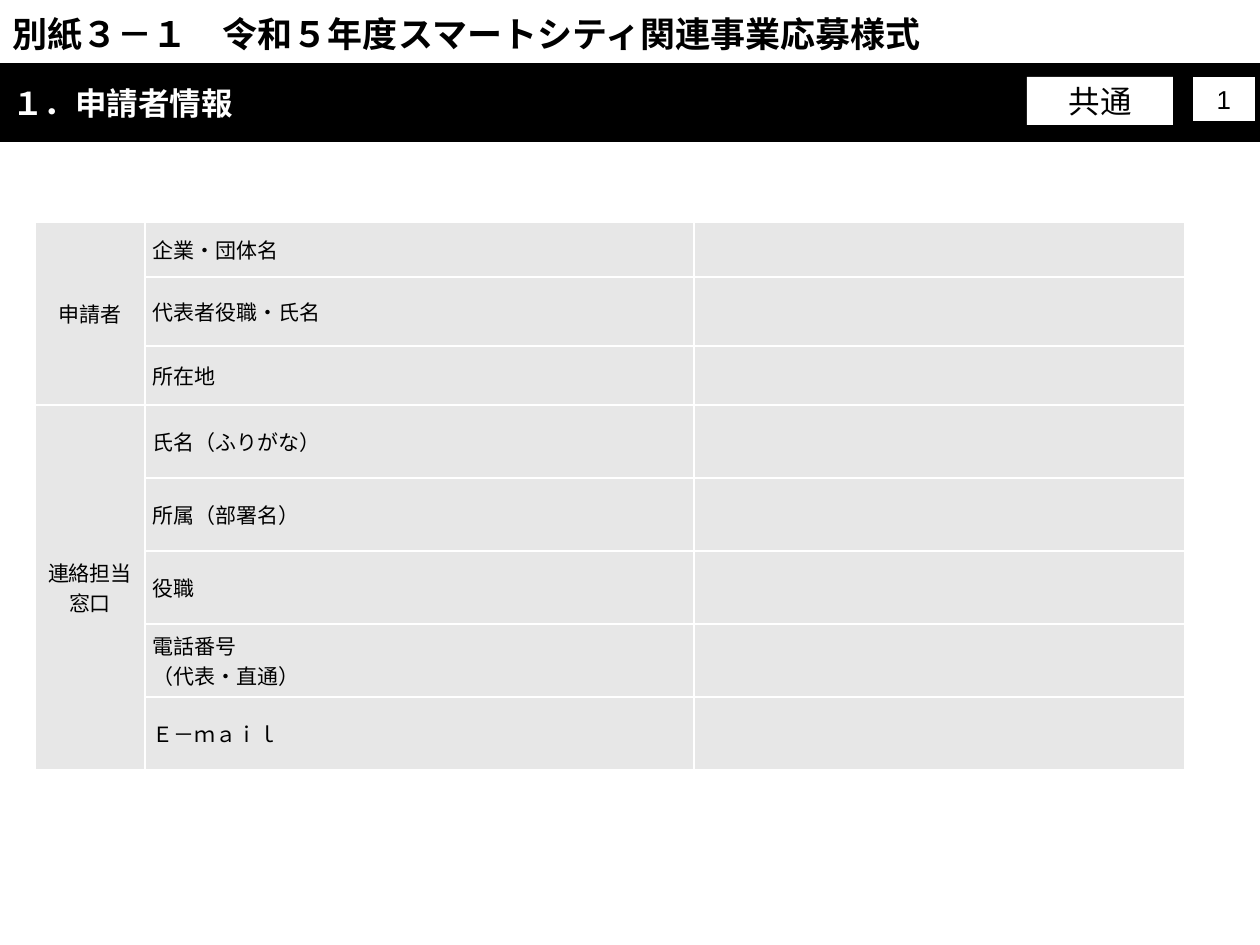
from lxml import etree
from pptx import Presentation
from pptx.dml.color import RGBColor
from pptx.enum.shapes import MSO_SHAPE
from pptx.enum.text import MSO_ANCHOR, PP_ALIGN
from pptx.oxml.ns import qn
from pptx.util import Pt

PX = 914400 / 126
RECT = MSO_SHAPE.RECTANGLE
MIDDLE = MSO_ANCHOR.MIDDLE
LEFT, CENTER, JUSTIFY = PP_ALIGN.LEFT, PP_ALIGN.CENTER, PP_ALIGN.JUSTIFY
GOTHIC, ARIAL = "Noto Sans CJK JP", "Arial"
BLACK, WHITE, GRAY = "000000", "FFFFFF", "E7E7E7"

COLUMNS = [110, 549, 491]
GROUPS = [
    ("申請者", [("企業・団体名", 55), ("代表者役職・氏名", 69), ("所在地", 59)]),
    ("連絡担当窓口", [("氏名（ふりがな）", 73), ("所属（部署名）", 73), ("役職", 73),
                ("電話番号\n（代表・直通）", 73), ("Ｅ－ｍａｉｌ", 73)]),
]


def px(n):
    return round(n * PX)


def rgb(color):
    return RGBColor.from_string(color)


def write(tf, text, size, color=BLACK, font=GOTHIC, bold=False, align=LEFT):
    tf.text = text
    for p in tf.paragraphs:
        p.alignment = align
        p.font.size, p.font.name, p.font.bold = Pt(size), font, bold
        p.font.color.rgb = rgb(color)
        for r in p.runs:
            etree.SubElement(r._r.get_or_add_rPr(), qn("a:ea"), typeface=GOTHIC)


def add_box(s, box, fill, text, size, line=None, **style):
    sp = s.shapes.add_shape(RECT, *map(px, box))
    sp.shadow.inherit = False
    sp.fill.solid()
    sp.fill.fore_color.rgb = rgb(fill)
    if line:
        sp.line.color.rgb = rgb(line)
        sp.line.width = Pt(0.75)
    else:
        sp.line.fill.background()
    sp.text_frame.vertical_anchor = MIDDLE
    write(sp.text_frame, text, size, **style)


def add_title(s, box, text):
    tf = s.shapes.add_textbox(*map(px, box)).text_frame
    tf.word_wrap = True
    write(tf, text, 20, font=ARIAL, bold=True)


def format_cell(cell):
    """Gray fill, white borders and narrow margins."""
    cell.margin_left = cell.margin_right = px(8)
    cell.margin_top = cell.margin_bottom = 0
    cell.vertical_anchor = MIDDLE
    tc_pr = cell._tc.get_or_add_tcPr()
    for side in ("a:lnL", "a:lnR", "a:lnT", "a:lnB"):
        ln = etree.SubElement(tc_pr, qn(side), w=str(Pt(1)))
        fill = etree.SubElement(ln, qn("a:solidFill"))
        etree.SubElement(fill, qn("a:srgbClr"), val=WHITE)
    cell.fill.solid()
    cell.fill.fore_color.rgb = rgb(GRAY)
    write(cell.text_frame, "", 12)


def add_form(s, left, top):
    heights = [height for _, items in GROUPS for _, height in items]
    size = (sum(COLUMNS), sum(heights))
    table = s.shapes.add_table(len(heights), len(COLUMNS),
                               *map(px, (left, top, *size))).table
    for column, width in zip(table.columns, COLUMNS):
        column.width = px(width)
    for row, height in zip(table.rows, heights):
        row.height = px(height)
    for cell in table.iter_cells():
        format_cell(cell)

    first = 0
    for heading, items in GROUPS:
        head = table.cell(first, 0)
        head.merge(table.cell(first + len(items) - 1, 0))
        head._tc.get_or_add_tcPr().set("vert", "eaVert")
        write(head.text_frame, heading, 12, align=CENTER)
        for row, (label, _) in enumerate(items, first):
            write(table.cell(row, 1).text_frame, label, 12, align=JUSTIFY)
        first += len(items)


def main():
    prs = Presentation()
    prs.slide_width, prs.slide_height = px(1260), px(945)
    s = prs.slides.add_slide(prs.slide_layouts[6])
    add_form(s, 35, 222)
    add_box(s, (0, 63, 1260, 79), BLACK, "１．申請者情報", 18, color=WHITE, bold=True)
    add_title(s, (0, 6, 987, 55), "別紙３－１　令和５年度スマートシティ関連事業応募様式")
    add_box(s, (1027, 77, 146, 48), WHITE, "共通", 18, font=ARIAL, align=CENTER)
    add_box(s, (1192, 76, 64, 46), WHITE, "1", 14.8, line=BLACK, font=ARIAL, align=CENTER)
    prs.save("out.pptx")


if __name__ == "__main__":
    main()
